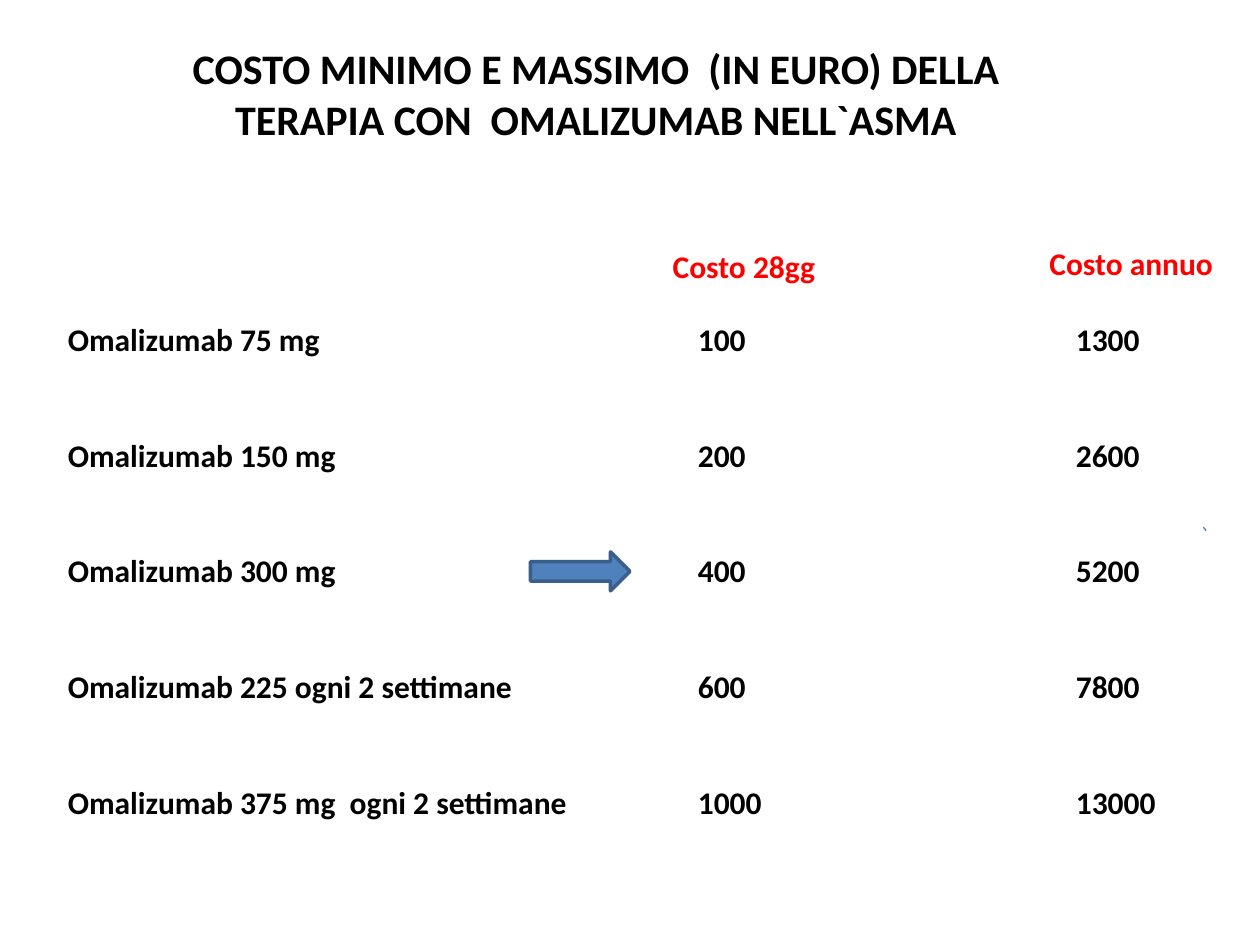
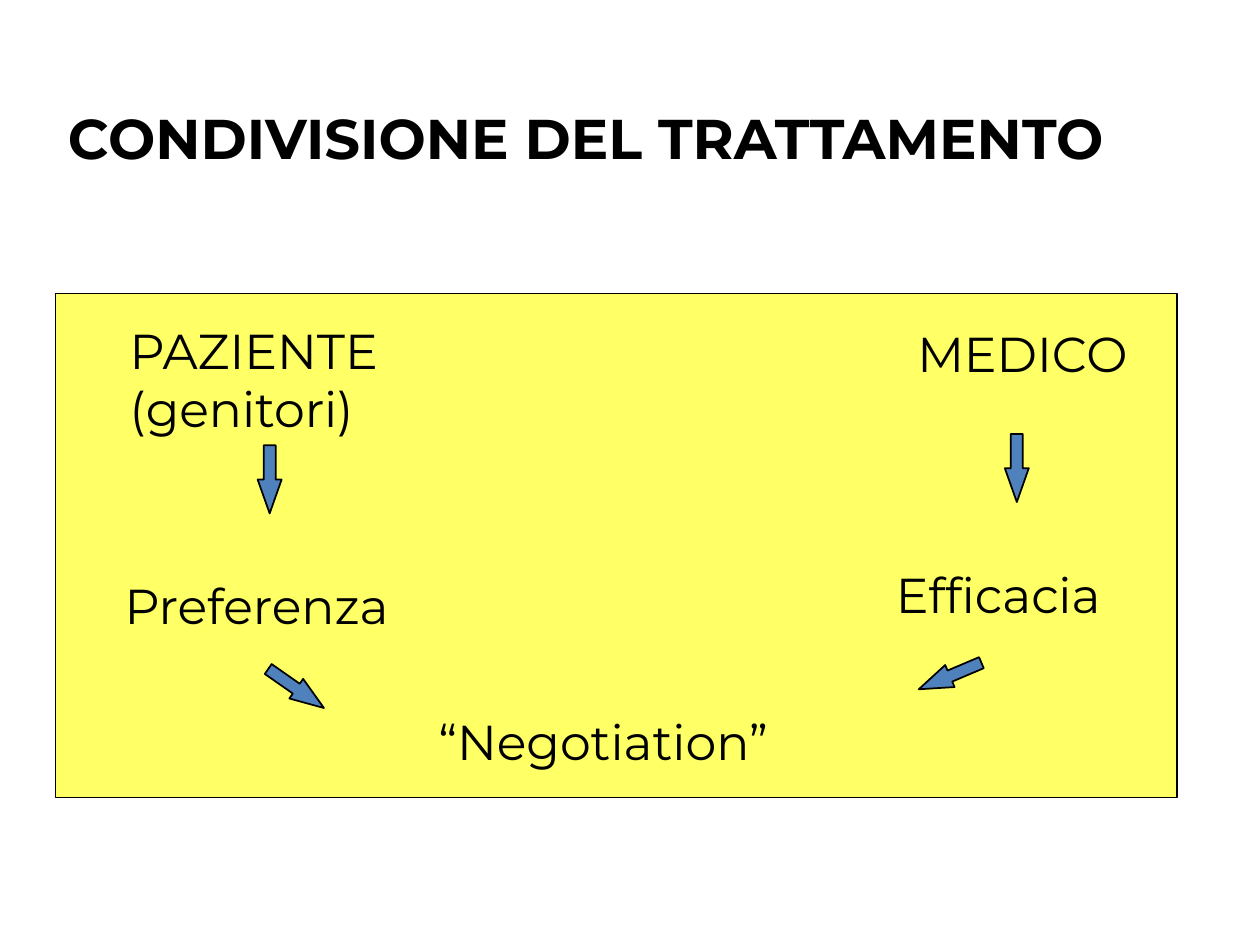
from pptx import Presentation
from pptx.dml.color import RGBColor
from pptx.enum.shapes import MSO_SHAPE
from pptx.enum.text import PP_ALIGN
from pptx.oxml.ns import qn
from pptx.util import Inches, Pt
from lxml.etree import SubElement

BLACK = RGBColor(0x00, 0x00, 0x00)
RED = RGBColor(0xFF, 0x00, 0x00)
YELLOW = RGBColor(0xFF, 0xFF, 0x66)
BLUE = RGBColor(0x4F, 0x81, 0xBD)
DARK_BLUE = RGBColor(0x3A, 0x5F, 0x8C)
ARC_BLUE = RGBColor(0x4B, 0x7E, 0xBC)

COST_STYLE = {"name": "Calibri", "size": Pt(18), "bold": True}
COST_TITLE = {**COST_STYLE, "size": Pt(24)}
SHARING_STYLE = {"name": "Montserrat", "size": Pt(28), "bold": False}
SHARING_TITLE = {**SHARING_STYLE, "size": Pt(32), "bold": True}
COST_MARGINS = (0.1, 0.05)
SHARING_MARGINS = (0.11, 0.06)


class SlideBuilder:
    def __init__(self, deck):
        self.deck = deck

    def new_slide(self, style, margins):
        self.page = self.deck.slides.add_slide(self.deck.slide_layouts[6])
        self.style = style
        self.margins = margins

    def fill_text(self, box, lines, style=None, color=BLACK, align=PP_ALIGN.LEFT, gap=0, tabs=()):
        frame = box.text_frame
        across, down = map(Inches, self.margins)
        layout = {"word_wrap": True, "margin_left": across, "margin_right": across,
                  "margin_top": down, "margin_bottom": down}
        for key, value in layout.items():
            setattr(frame, key, value)
        for index, line in enumerate(lines):
            para = frame.paragraphs[0] if index == 0 else frame.add_paragraph()
            para.alignment = align
            if index:
                para.space_before = Pt(gap)
            if tabs:
                tab_list = SubElement(para._p.get_or_add_pPr(), qn("a:tabLst"))
                for position in tabs:
                    SubElement(tab_list, qn("a:tab"), pos=str(Inches(position)), algn="l")
            span = para.add_run()
            span.text = line
            for key, value in (style or self.style).items():
                setattr(span.font, key, value)
            span.font.color.rgb = color

    def text(self, place, *lines, **options):
        box = self.page.shapes.add_textbox(*map(Inches, place))
        self.fill_text(box, lines, **options)

    def shape(self, kind, place, fill=None, line=None, width=1, rotation=0, adjustments=()):
        shape = self.page.shapes.add_shape(kind, *map(Inches, place))
        shape.shadow.inherit = False
        shape.rotation = rotation
        for index, value in enumerate(adjustments):
            shape.adjustments[index] = value
        if fill is None:
            shape.fill.background()
        else:
            shape.fill.solid()
            shape.fill.fore_color.rgb = fill
        if line is None:
            shape.line.fill.background()
        else:
            shape.line.color.rgb = line
            shape.line.width = Pt(width)
        return shape


def build_costs(builder):
    builder.new_slide(COST_STYLE, COST_MARGINS)
    builder.text((0.91, 0.29, 7.64, 0.91),
                 "COSTO MINIMO E MASSIMO  (IN EURO) DELLA TERAPIA CON  OMALIZUMAB NELL`ASMA",
                 style=COST_TITLE, align=PP_ALIGN.CENTER)
    costs = [
        ("Omalizumab 75 mg", 100, 1300),
        ("Omalizumab 150 mg", 200, 2600),
        ("Omalizumab 300 mg", 400, 5200),
        ("Omalizumab 225 ogni 2 settimane", 600, 7800),
        ("Omalizumab 375 mg  ogni 2 settimane", 1000, 13000),
    ]
    rows = ["\t".join(map(str, cost)) for cost in costs]
    builder.text((0.44, 2.49, 9.3, 4.04), *rows, gap=44.5, tabs=(5, 8))
    builder.text((8.23, 1.89, 1.55, 0.4), "Costo annuo", color=RED)
    builder.text((5.24, 1.91, 1.4, 0.4), "Costo 28gg", color=RED)
    builder.shape(MSO_SHAPE.ARC, (1.54, 3.91, 8.03, 0.61), line=ARC_BLUE, width=0.75,
                  adjustments=(215.742, 0))
    builder.shape(MSO_SHAPE.RIGHT_ARROW, (4.21, 4.38, 0.79, 0.31), BLUE, DARK_BLUE, 2)


def build_sharing(builder):
    builder.new_slide(SHARING_STYLE, SHARING_MARGINS)
    builder.shape(MSO_SHAPE.RECTANGLE, (0.44, 2.33, 8.9, 4), YELLOW, BLACK)
    builder.text((0.43, 0.76, 9.5, 0.65), "CONDIVISIONE DEL TRATTAMENTO", style=SHARING_TITLE)
    labels = [
        ("PAZIENTE (genitori)", (0.92, 2.48, 2.57, 1.05)),
        ("MEDICO", (7.17, 2.51, 1.95, 0.58)),
        ("Preferenza", (0.88, 4.51, 2.6, 0.58)),
        ("Efficacia", (7, 4.42, 2.1, 0.58)),
    ]
    for label, place in labels:
        builder.text(place, label)
    negotiation = builder.shape(MSO_SHAPE.RECTANGLE, (3.37, 5.59, 3.1, 0.58), YELLOW)
    builder.fill_text(negotiation, ["“Negotiation”"])
    arrows = [(7.8, 3.62, 90), (1.87, 3.71, 90), (7.27, 5.27, 157), (2.08, 5.37, 35)]
    for left, top, rotation in arrows:
        builder.shape(MSO_SHAPE.RIGHT_ARROW, (left, top, 0.54, 0.19), BLUE, BLACK,
                      rotation=rotation, adjustments=(0.5, 1.41))


def main():
    deck = Presentation()
    deck.slide_width = Inches(10)
    deck.slide_height = Inches(7.5)
    builder = SlideBuilder(deck)
    build_costs(builder)
    build_sharing(builder)
    deck.save("out.pptx")


if __name__ == "__main__":
    main()
